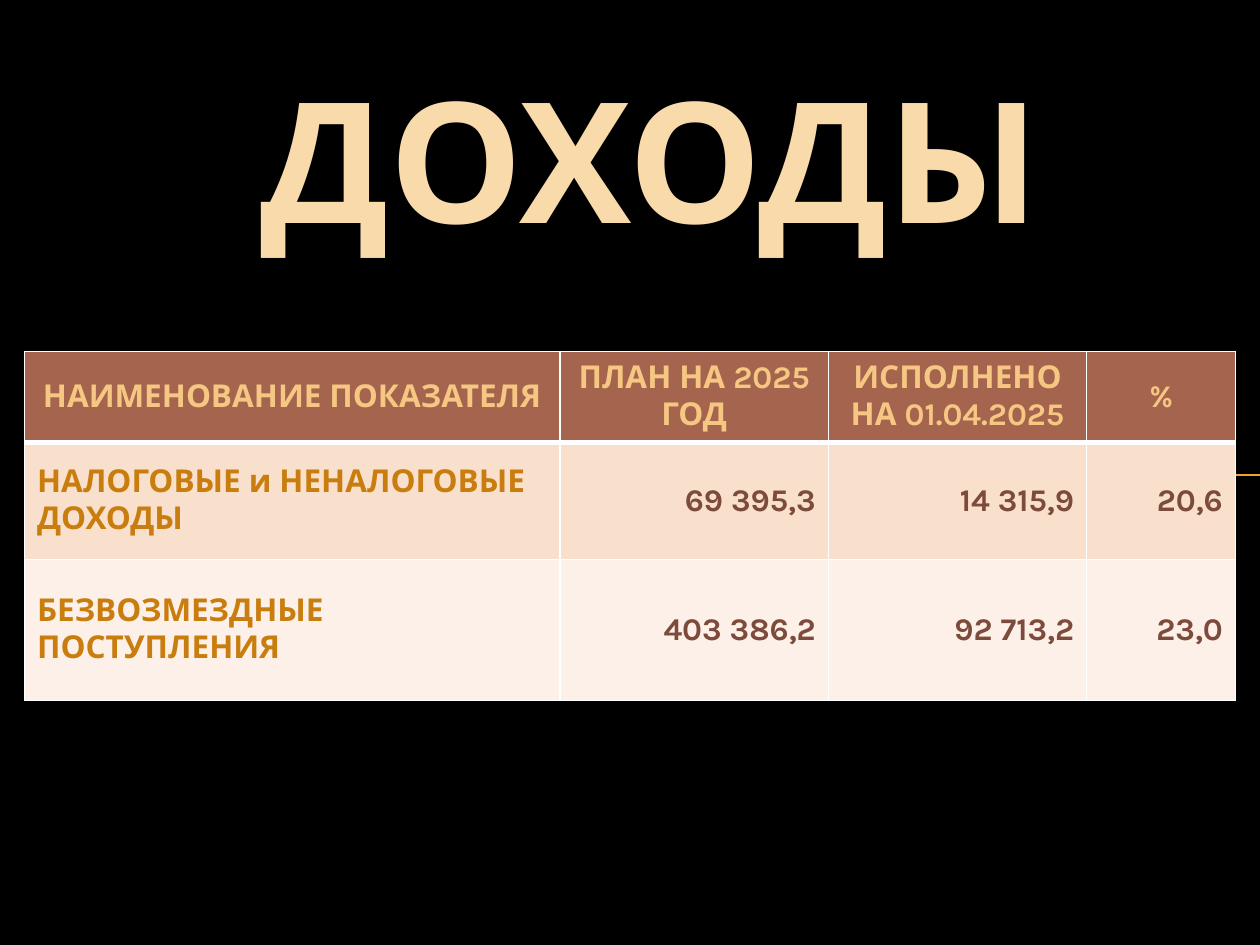
import pptx
import pptx.dml.color
import pptx.enum.shapes
import pptx.enum.text
import pptx.oxml.ns
import pptx.util
from lxml import etree

Pt = pptx.util.Pt
Align = pptx.enum.text.PP_ALIGN
Anchor = pptx.enum.text.MSO_ANCHOR
qn = pptx.oxml.ns.qn

FONT = "Karla"
COLORS = {
    "back": "000000", "rule": "F0A22E", "title": "F9DAAB", "grid": "FFFFFF",
    "head": "A5644E", "label": "F6C782", "name": "C87D0E", "value": "7C4B3B",
    "odd": "F9E0CD", "even": "FCF0E8",
}
ROWS = [
    ["НАИМЕНОВАНИЕ ПОКАЗАТЕЛЯ", "ПЛАН НА 2025 ГОД", "ИСПОЛНЕНО НА 01.04.2025", "%"],
    ["НАЛОГОВЫЕ и НЕНАЛОГОВЫЕ ДОХОДЫ", "69 395,3", "14 315,9", "20,6"],
    ["БЕЗВОЗМЕЗДНЫЕ ПОСТУПЛЕНИЯ", "403 386,2", "92 713,2", "23,0"],
]
WIDTHS = [306, 153.4, 147.6, 85]
HEIGHTS = [51.8, 67, 80.6]


def color(key):
    return pptx.dml.color.RGBColor.from_string(COLORS[key])


def write(frame, text, size, key, align):
    para = frame.paragraphs[0]
    para.alignment = align
    run = para.add_run()
    run.text = text
    run.font.name = FONT
    run.font.size = Pt(size)
    run.font.bold = True
    run.font.color.rgb = color(key)


def add_rule(slide, left, top, width):
    line = slide.shapes.add_connector(
        pptx.enum.shapes.MSO_CONNECTOR.STRAIGHT,
        Pt(left), Pt(top), Pt(left + width), Pt(top))
    line.line.color.rgb = color("rule")
    line.line.width = Pt(0.75)
    etree.SubElement(line._element.spPr, qn("a:effectLst"))


def add_title(slide, left, top, width, height):
    box = slide.shapes.add_textbox(Pt(left), Pt(top), Pt(width), Pt(height))
    frame = box.text_frame
    frame.word_wrap = True
    frame.vertical_anchor = Anchor.TOP
    frame.margin_top = frame.margin_bottom = 0
    write(frame, "ДОХОДЫ", 96, "title", Align.CENTER)


def set_edges(cell, widths):
    props = cell._tc.get_or_add_tcPr()
    for spot, (side, width) in enumerate(widths.items()):
        edge = etree.Element(qn("a:" + side), w=str(Pt(width)))
        fill = etree.SubElement(edge, qn("a:solidFill"))
        etree.SubElement(fill, qn("a:srgbClr"), val=COLORS["grid"])
        props.insert(spot, edge)  # edges come before the fill


def add_grid(slide, left, top, width, height):
    grid = slide.shapes.add_table(
        len(ROWS), len(WIDTHS), Pt(left), Pt(top), Pt(width), Pt(height)).table
    for col, size in zip(grid.columns, WIDTHS):
        col.width = Pt(width * size / sum(WIDTHS))
    for row, size in zip(grid.rows, HEIGHTS):
        row.height = Pt(height * size / sum(HEIGHTS))

    for r, texts in enumerate(ROWS):
        band = ["head", "odd", "even"][r]
        for c, text in enumerate(texts):
            cell = grid.cell(r, c)
            cell.vertical_anchor = Anchor.MIDDLE
            cell.fill.solid()
            cell.fill.fore_color.rgb = color(band)
            if r == 0:
                key, align = "label", Align.CENTER
            elif c == 0:
                key, align = "name", Align.LEFT
            else:
                key, align = "value", Align.RIGHT
            write(cell.text_frame, text, 18, key, align)
            # Thick line between heading and body
            set_edges(cell, {"lnL": 1, "lnR": 1,
                             "lnT": 3 if r == 1 else 1,
                             "lnB": 3 if r == 0 else 1})


def main():
    deck = pptx.Presentation()
    deck.slide_width, deck.slide_height = Pt(720), Pt(540)
    slide = deck.slides.add_slide(deck.slide_layouts[6])
    slide.background.fill.solid()
    slide.background.fill.fore_color.rgb = color("back")
    add_rule(slide, 40, 271.5, 680)
    add_title(slide, 65.5, 31.7, 612, 107.3)
    add_grid(slide, 14, 200.9, sum(WIDTHS), sum(HEIGHTS))
    deck.save("out.pptx")


if __name__ == "__main__":
    main()
